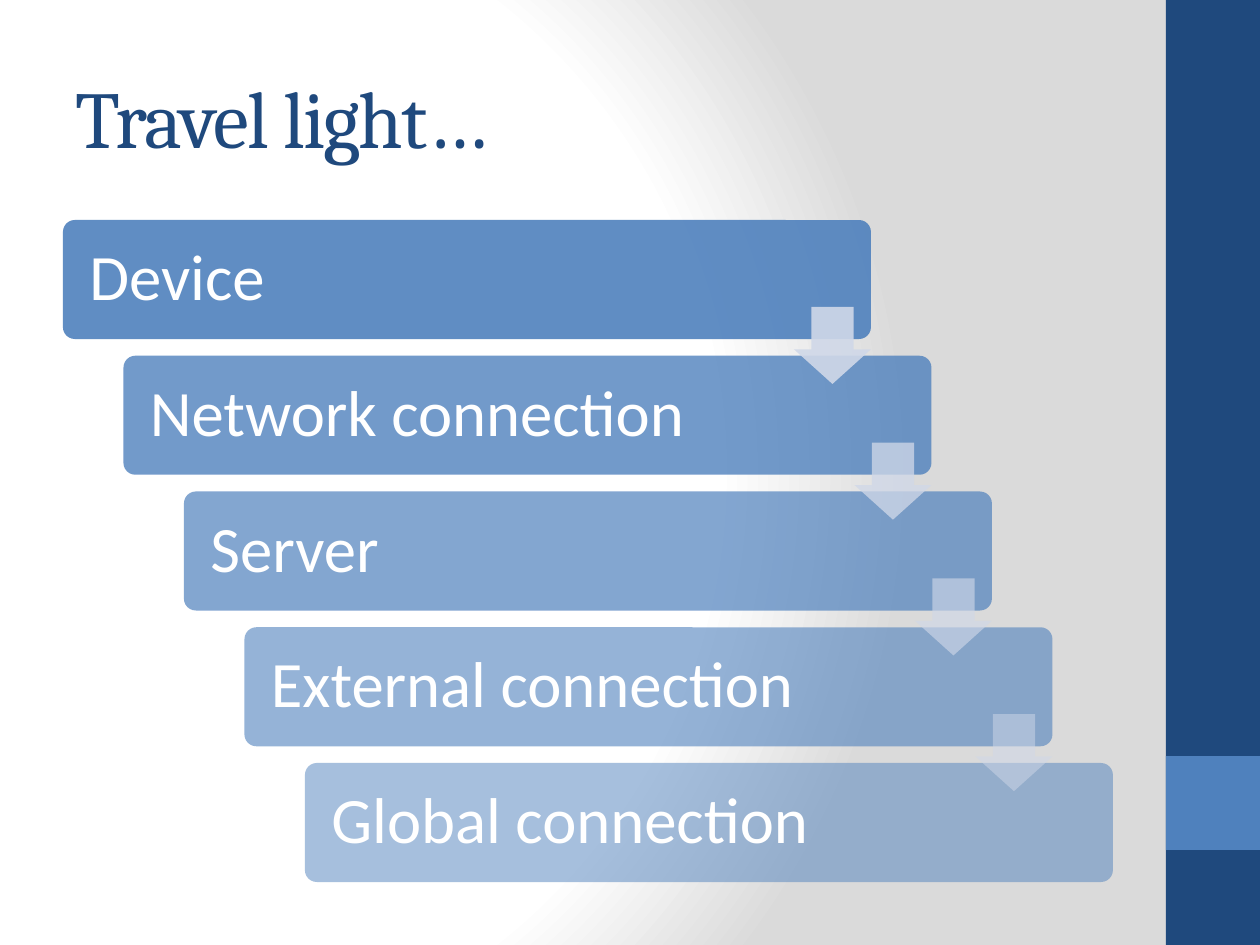
from lxml import etree
from pptx import Presentation
from pptx.dml.color import RGBColor
from pptx.enum.shapes import MSO_SHAPE
from pptx.enum.text import MSO_ANCHOR, MSO_AUTO_SIZE, PP_ALIGN
from pptx.oxml import parse_xml
from pptx.oxml.ns import nsdecls, qn
from pptx.util import Pt

RECT = MSO_SHAPE.RECTANGLE
ROUNDED = MSO_SHAPE.ROUNDED_RECTANGLE
DOWN_ARROW = MSO_SHAPE.DOWN_ARROW
MIDDLE = MSO_ANCHOR.MIDDLE
LEFT = PP_ALIGN.LEFT
NO_AUTOFIT = MSO_AUTO_SIZE.NONE

NAVY = RGBColor(0x1F, 0x49, 0x7D)
BLUE = RGBColor(0x4F, 0x81, 0xBD)
PALE_BLUE = RGBColor(0xD0, 0xD8, 0xE8)
WHITE = RGBColor(0xFF, 0xFF, 0xFF)
GREY = RGBColor(0xDA, 0xDA, 0xDA)

PX_PER_INCH = 126
EMU_PER_PX = 914400 / PX_PER_INCH
SLIDE_W, SLIDE_H = 1260, 945

STEPS = ["Device", "Network connection", "Server", "External connection", "Global connection"]
BAR_ALPHAS = [90, 80, 70, 60, 50]
ARROW_ALPHAS = [90, 77, 63, 50]


def px(length):
    return round(length * EMU_PER_PX)


def add_filled(slide, kind, box, color, alpha=100):
    shape = slide.shapes.add_shape(kind, *map(px, box))
    shape.shadow.inherit = False
    shape.fill.solid()
    shape.fill.fore_color.rgb = color
    shape.line.fill.background()
    if alpha < 100:
        tint = shape.element.spPr.find(qn("a:solidFill"))[0]
        etree.SubElement(tint, qn("a:alpha")).set("val", str(alpha * 1000))
    return shape


def paint_background(slide):
    slide.background.fill.solid()
    background = slide.element.find(".//" + qn("p:bgPr"))
    stops = "".join(
        f'<a:gs pos="{pos * 1000}"><a:srgbClr val="{color}"/></a:gs>'
        for pos, color in [(0, WHITE), (75, WHITE), (100, GREY)]
    )
    gradient = parse_xml(
        f'<a:gradFill {nsdecls("a")} rotWithShape="1"><a:gsLst>{stops}</a:gsLst>'
        '<a:path path="circle"><a:fillToRect l="20000" t="50000" r="100000" b="50000"/>'
        "</a:path></a:gradFill>"
    )
    background.replace(background[0], gradient)


def add_side_band(slide, box):
    left, top, width, height = box
    add_filled(slide, RECT, box, NAVY)
    add_filled(slide, RECT, (left, top + height * 4 / 5, width, width), BLUE)


def place_title(slide, box):
    title = slide.shapes.title
    title.left, title.top, title.width, title.height = map(px, box)
    frame = title.text_frame
    frame.text = "Travel light…"
    frame.auto_size = NO_AUTOFIT
    frame.vertical_anchor = MIDDLE
    paragraph = frame.paragraphs[0]
    paragraph.alignment = LEFT
    paragraph.font.name = "Cambria"
    paragraph.font.size = Pt(46)
    paragraph.font.color.rgb = NAVY
    paragraph.runs[0].font._element.set("spc", "-100")


def write_step(bar, label):
    frame = bar.text_frame
    frame.word_wrap = True
    frame.vertical_anchor = MIDDLE
    frame.margin_left = frame.margin_right = px(23)
    frame.text = label
    paragraph = frame.paragraphs[0]
    paragraph.alignment = LEFT
    paragraph.line_spacing = 0.9
    paragraph.font.name = "Calibri"
    paragraph.font.size = Pt(37)
    paragraph.font.color.rgb = WHITE


def add_staircase(slide, box):
    left, top, width, height = box
    bar_w, bar_h, arrow_size, arrow_drop = 808, 119, 77, 87
    step_x = (width - bar_w) / (len(STEPS) - 1)
    step_y = (height - bar_h) / (len(STEPS) - 1)
    for i, (label, alpha) in enumerate(zip(STEPS, BAR_ALPHAS)):
        place = (left + i * step_x, top + i * step_y, bar_w, bar_h)
        bar = add_filled(slide, ROUNDED, place, BLUE, alpha)
        bar.adjustments[0] = 0.1
        write_step(bar, label)
    for i, alpha in enumerate(ARROW_ALPHAS):
        arrow_x = left + i * step_x + bar_w - arrow_size
        arrow_y = top + i * step_y + arrow_drop
        place = (arrow_x, arrow_y, arrow_size, arrow_size)
        arrow = add_filled(slide, DOWN_ARROW, place, PALE_BLUE, alpha)
        arrow.adjustments[0] = 0.55
        arrow.adjustments[1] = 0.45


def main():
    deck = Presentation()
    deck.slide_width, deck.slide_height = px(SLIDE_W), px(SLIDE_H)
    slide = deck.slides.add_slide(deck.slide_layouts[5])
    paint_background(slide)
    add_side_band(slide, (1166, 0, 94, SLIDE_H))
    place_title(slide, (63, 38, 1050, 157))
    add_staircase(slide, (63, 220, 1050, 662))
    deck.save("out.pptx")


if __name__ == "__main__":
    main()
